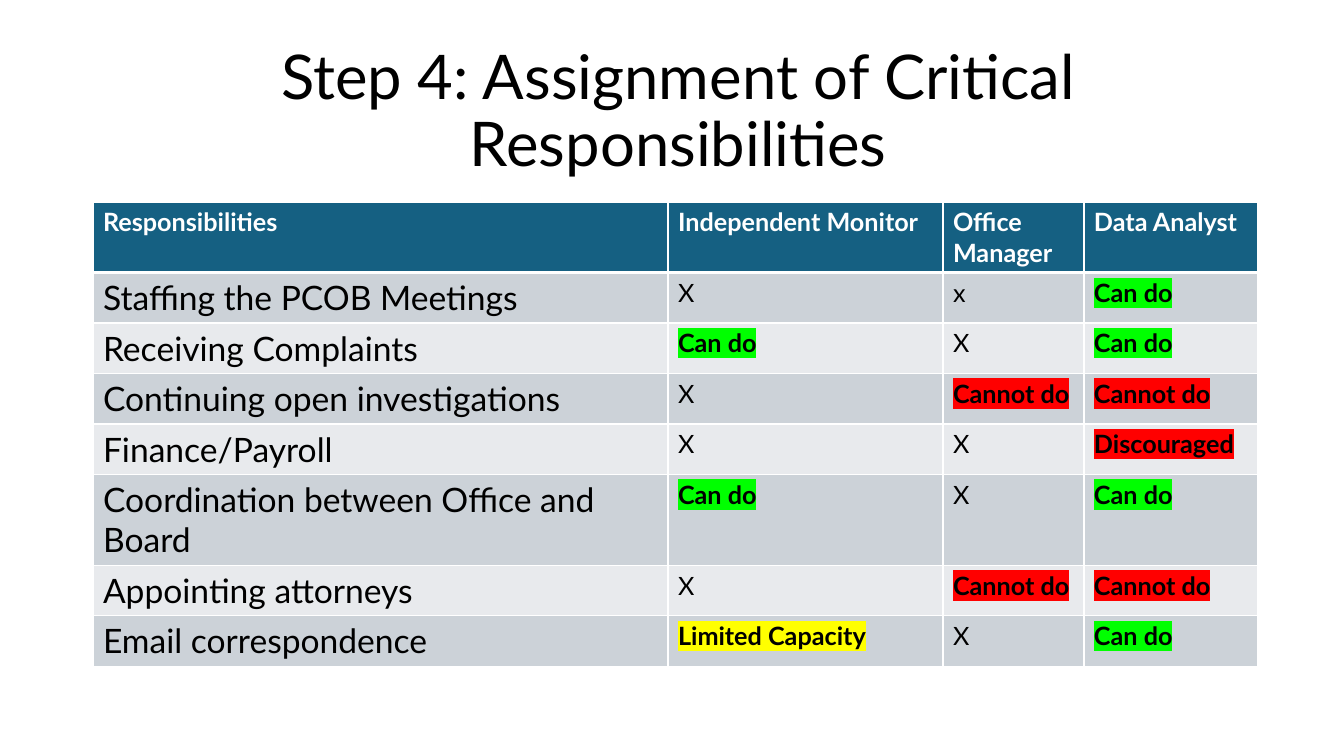
from lxml import etree
from pptx import Presentation
from pptx.dml.color import RGBColor
from pptx.enum.text import MSO_ANCHOR, MSO_AUTO_SIZE, PP_ALIGN
from pptx.oxml.ns import qn
from pptx.util import Emu, Pt

MIDDLE, CENTER, NO_FIT = MSO_ANCHOR.MIDDLE, PP_ALIGN.CENTER, MSO_AUTO_SIZE.NONE

# Content
TITLE = "Step 4: Assignment of Critical Responsibilities"
HEADER = ("Responsibilities", "Independent Monitor", "Office Manager", "Data Analyst")
DUTIES = [
    ("Staffing the PCOB Meetings", "X", "x", "Can do"),
    ("Receiving Complaints", "Can do", "X", "Can do"),
    ("Continuing open investigations", "X", "Cannot do", "Cannot do"),
    ("Finance/Payroll", "X", "X", "Discouraged"),
    ("Coordination between Office and Board", "Can do", "X", "Can do"),
    ("Appointing attorneys", "X", "Cannot do", "Cannot do"),
    ("Email correspondence", "Limited Capacity", "X", "Can do"),
]

# Style
FONT = "Lato"
BLACK = RGBColor(0x00, 0x00, 0x00)
WHITE = RGBColor(0xFF, 0xFF, 0xFF)
BLUE = RGBColor(0x15, 0x60, 0x82)
BANDS = (RGBColor(0xCC, 0xD2, 0xD8), RGBColor(0xE8, 0xEA, 0xED))
GREEN = RGBColor(0x00, 0xFF, 0x00)
RED = RGBColor(0xFF, 0x00, 0x00)
YELLOW = RGBColor(0xFF, 0xFF, 0x00)
HIGHLIGHTS = {"Can do": GREEN, "Cannot do": RED, "Discouraged": RED,
              "Limited Capacity": YELLOW}

# Layout in px
SLIDE = (1344, 756)
TITLE_BOX = (93, 40, 1171, 146)
TABLE_LEFT, TABLE_TOP = 93, 202
COL_WIDTHS = (575, 275, 141, 174)
ROW_HEIGHTS = (70, 50, 50, 50, 50, 91, 50, 50)


def px(n):
    return Emu(round(n * 914400 / 100.8))


def add_run(p, text, size, color, bold=False):
    r = p.add_run()
    r.text = text
    r.font.size, r.font.bold = Pt(size), bold
    r.font.color.rgb = color
    r.font.name = FONT
    return r


def highlight(r, color):
    mark = etree.Element(qn("a:highlight"))
    etree.SubElement(mark, qn("a:srgbClr"), val=str(color))
    r.font._element.find(qn("a:solidFill")).addnext(mark)


def set_borders(cell, top, bottom):
    tcPr = cell._tc.get_or_add_tcPr()
    sides = (("a:lnL", 1), ("a:lnR", 1), ("a:lnT", top), ("a:lnB", bottom))
    for i, (tag, width) in enumerate(sides):
        line = etree.Element(qn(tag), w=str(Pt(width)))
        fill = etree.SubElement(line, qn("a:solidFill"))
        etree.SubElement(fill, qn("a:srgbClr"), val=str(WHITE))
        tcPr.insert(i, line)


prs = Presentation()
prs.slide_width, prs.slide_height = (px(n) for n in SLIDE)
s = prs.slides.add_slide(prs.slide_layouts[5])

# Title
title = s.shapes.title
title.left, title.top, title.width, title.height = (px(n) for n in TITLE_BOX)
tf = title.text_frame
tf.word_wrap, tf.auto_size, tf.vertical_anchor = True, NO_FIT, MIDDLE
p = tf.paragraphs[0]
p.alignment, p.line_spacing = CENTER, 0.9
add_run(p, TITLE, 44, BLACK)

# Table of who can take on each responsibility
rows = [HEADER] + DUTIES
table = s.shapes.add_table(len(rows), len(HEADER), px(TABLE_LEFT), px(TABLE_TOP),
                           px(sum(COL_WIDTHS)), px(sum(ROW_HEIGHTS))).table
for column, width in zip(table.columns, COL_WIDTHS):
    column.width = px(width)
for row, height in zip(table.rows, ROW_HEIGHTS):
    row.height = px(height)

for i, row in enumerate(rows):
    is_header = i == 0
    for j, text in enumerate(row):
        cell = table.cell(i, j)
        cell.fill.solid()
        cell.fill.fore_color.rgb = BLUE if is_header else BANDS[(i - 1) % 2]
        set_borders(cell, top=3 if i == 1 else 1, bottom=3 if is_header else 1)
        mark = HIGHLIGHTS.get(text)
        r = add_run(cell.text_frame.paragraphs[0], text,
                    24 if j == 0 and not is_header else 18,
                    WHITE if is_header else BLACK,
                    bold=is_header or mark is not None)
        if mark is not None:
            highlight(r, mark)

prs.save("out.pptx")
